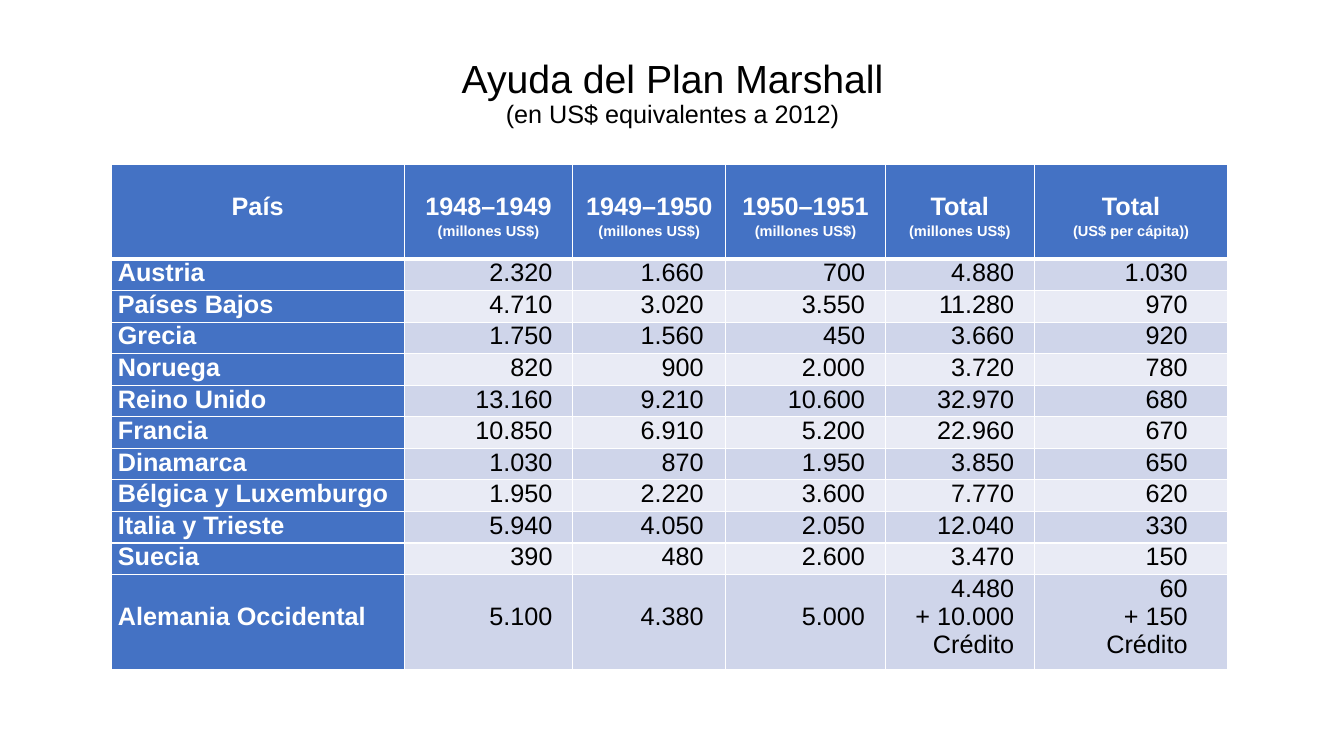
from dataclasses import dataclass

from lxml import etree
from pptx import Presentation
from pptx.dml.color import RGBColor
from pptx.enum import text
from pptx.oxml import ns
from pptx.util import Inches, Pt


@dataclass(frozen=True)
class Theme:
    font: str = "Arial"
    title_size: int = 28
    body_size: int = 18
    black: str = "000000"
    white: str = "FFFFFF"
    blue: str = "4472C4"
    bands: tuple = ("CFD5EA", "E9EBF5")


THEME = Theme()
LEFT, CENTER, RIGHT = text.PP_ALIGN.LEFT, text.PP_ALIGN.CENTER, text.PP_ALIGN.RIGHT

MILLIONS = "(millones US$)"
HEADINGS = [("País", ""), ("1948–1949", MILLIONS), ("1949–1950", MILLIONS),
            ("1950–1951", MILLIONS), ("Total", MILLIONS), ("Total", "(US$ per cápita))")]
AID = [
    ("Austria", "2.320", "1.660", "700", "4.880", "1.030"),
    ("Países Bajos", "4.710", "3.020", "3.550", "11.280", "970"),
    ("Grecia", "1.750", "1.560", "450", "3.660", "920"),
    ("Noruega", "820", "900", "2.000", "3.720", "780"),
    ("Reino Unido", "13.160", "9.210", "10.600", "32.970", "680"),
    ("Francia", "10.850", "6.910", "5.200", "22.960", "670"),
    ("Dinamarca", "1.030", "870", "1.950", "3.850", "650"),
    ("Bélgica y Luxemburgo", "1.950", "2.220", "3.600", "7.770", "620"),
    ("Italia y Trieste", "5.940", "4.050", "2.050", "12.040", "330"),
    ("Suecia", "390", "480", "2.600", "3.470", "150"),
    ("Alemania Occidental", "5.100", "4.380", "5.000",
     "4.480\n+ 10.000\nCrédito", "60\n+ 150\nCrédito"),
]
COLUMN_WIDTHS = [2.91, 1.67, 1.52, 1.58, 1.48, 1.92]
RIGHT_MARGINS = [0.07, 0.2, 0.22, 0.2, 0.2, 0.4]
TALL_ROW = 0.94
LINE_HEIGHT = 0.28


def format_para(para, size, color, align, bold=False):
    para.alignment = align
    para.font.name = THEME.font
    para.font.size = Pt(size)
    para.font.bold = bold
    para.font.color.rgb = RGBColor.from_string(color)


def set_borders(cell, top, bottom):
    properties = cell._tc.get_or_add_tcPr()
    for index, (side, width) in enumerate(
            [("lnL", 1), ("lnR", 1), ("lnT", top), ("lnB", bottom)]):
        line = etree.Element(ns.qn(f"a:{side}"), w=str(Pt(width)))
        fill = etree.SubElement(line, ns.qn("a:solidFill"))
        etree.SubElement(fill, ns.qn("a:srgbClr"), val=THEME.white)
        properties.insert(index, line)


def style_cell(cell, fill, right_margin, top_margin=0):
    cell.margin_left = Inches(0.07)
    cell.margin_right = Inches(right_margin)
    cell.margin_top = Inches(top_margin)
    cell.margin_bottom = 0
    cell.fill.solid()
    cell.fill.fore_color.rgb = RGBColor.from_string(fill)


def add_title(page, left, top, width, height):
    title = page.shapes.title
    title.left, title.top = Inches(left), Inches(top)
    title.width, title.height = Inches(width), Inches(height)
    frame = title.text_frame
    frame.auto_size = text.MSO_AUTO_SIZE.NONE
    frame.vertical_anchor = text.MSO_ANCHOR.MIDDLE
    para = frame.paragraphs[0]
    format_para(para, THEME.title_size, THEME.black, CENTER)
    para.line_spacing = 0.9
    para.add_run().text = "Ayuda del Plan Marshall"
    para.add_line_break()
    subtitle = para.add_run()
    subtitle.text = "(en US$ equivalentes a 2012)"
    subtitle.font.size = Pt(THEME.body_size)


def fill_header(table):
    for column, (heading, unit) in enumerate(HEADINGS):
        cell = table.cell(0, column)
        style_cell(cell, THEME.blue, 0.07, LINE_HEIGHT)
        set_borders(cell, 1, 3)
        para = cell.text_frame.paragraphs[0]
        format_para(para, THEME.body_size, THEME.white, CENTER, bold=True)
        para.add_run().text = heading
        if unit:
            para.add_line_break()
            span = para.add_run()
            span.text = unit
            span._r.get_or_add_rPr().set("baseline", "30000")


def fill_body(table):
    for row, values in enumerate(AID, start=1):
        tall = row == len(AID)
        for column, value in enumerate(values):
            cell = table.cell(row, column)
            is_country = column == 0
            fill = THEME.blue if is_country else THEME.bands[(row - 1) % 2]
            lowered = tall and "\n" not in value
            style_cell(cell, fill, RIGHT_MARGINS[column], LINE_HEIGHT if lowered else 0)
            set_borders(cell, 3 if row == 1 else 1, 1)
            cell.text_frame.text = value
            for para in cell.text_frame.paragraphs:
                format_para(para, THEME.body_size,
                            THEME.white if is_country else THEME.black,
                            LEFT if is_country else RIGHT, bold=is_country)


def add_aid_table(page, left, top, width, height):
    frame = page.shapes.add_table(len(AID) + 1, len(HEADINGS), Inches(left),
                                  Inches(top), Inches(width), Inches(height))
    table = frame.table
    table.first_row = table.horz_banding = False
    for column, column_width in zip(table.columns, COLUMN_WIDTHS):
        column.width = Inches(column_width)
    # First and last rows are tall; the rest share what is left
    short_row = (height - 2 * TALL_ROW) / (len(AID) - 1)
    for index, row in enumerate(table.rows):
        row.height = Inches(TALL_ROW if index in (0, len(AID)) else short_row)
    fill_header(table)
    fill_body(table)


def main():
    deck = Presentation()
    deck.slide_width, deck.slide_height = Inches(13.33), Inches(7.5)
    page = deck.slides.add_slide(deck.slide_layouts.get_by_name("Title Only"))
    add_title(page, 0.92, 0.21, 11.5, 1.45)
    add_aid_table(page, 1.1, 1.63, sum(COLUMN_WIDTHS), 5.01)
    deck.save("out.pptx")


if __name__ == "__main__":
    main()
